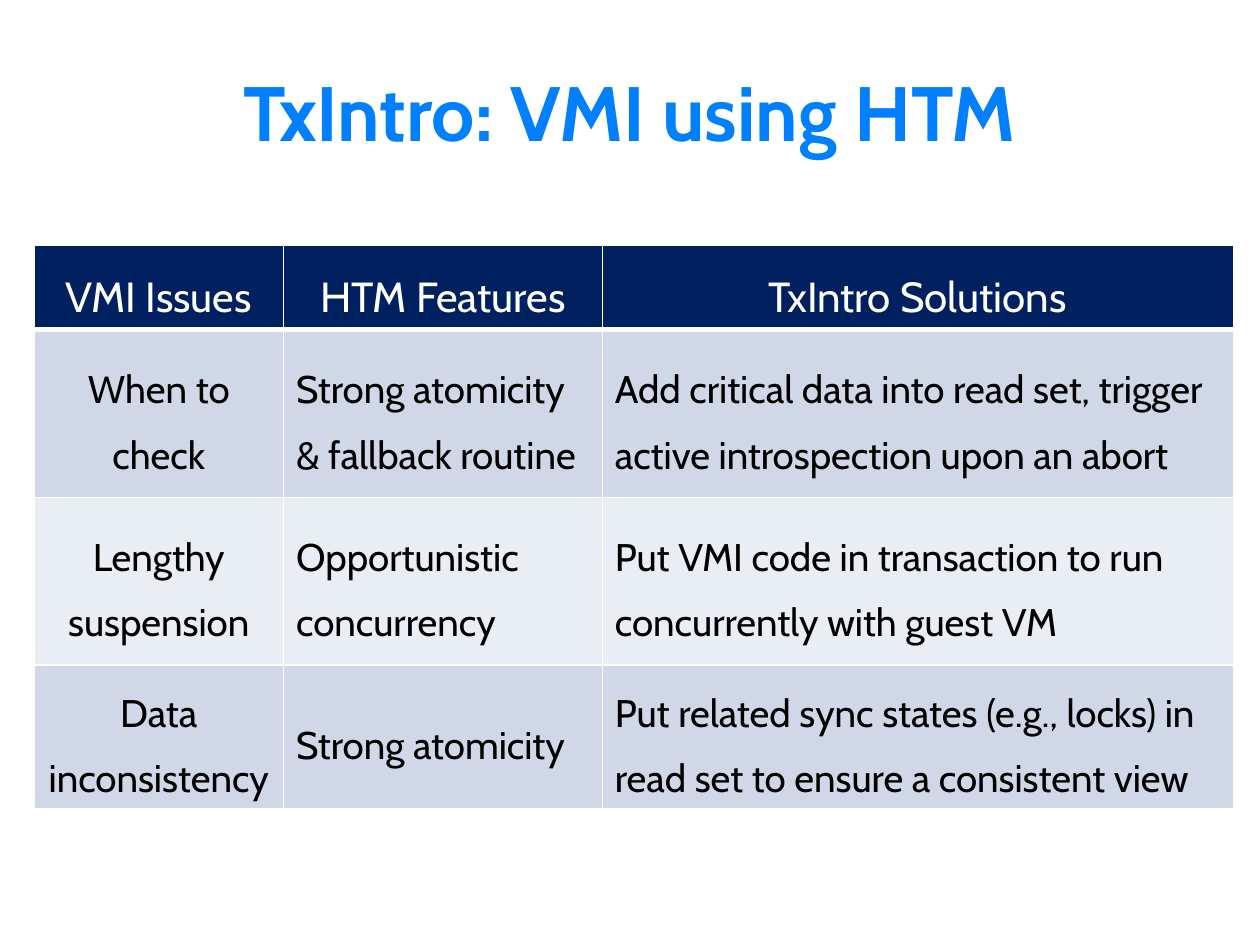
from lxml import etree
from pptx import Presentation
from pptx.dml.color import RGBColor
from pptx.enum.text import MSO_ANCHOR, PP_ALIGN
from pptx.oxml.ns import qn
from pptx.util import Inches, Pt

CENTER, LEFT = PP_ALIGN.CENTER, PP_ALIGN.LEFT
MIDDLE = MSO_ANCHOR.MIDDLE
FONT = "Cabin"
COLORS = {
    "title": "0080FF",
    "header": "002060",
    "band_dark": "D0D8E8",
    "band_light": "E9EDF4",
    "white": "FFFFFF",
    "black": "000000",
}
TITLE_ONLY = 5

COL_WIDTHS = [1.98, 2.53, 5.01]
ROW_HEIGHTS = [0.46, 1.33, 1.33, 0.91]
ROWS = [
    ["VMI Issues", "HTM Features", "TxIntro Solutions"],
    ["When to check", "Strong atomicity & fallback routine",
     "Add critical data into read set, trigger active introspection upon an abort"],
    ["Lengthy suspension", "Opportunistic\nconcurrency",
     "Put VMI code in transaction to run concurrently with guest VM"],
    ["Data inconsistency", "Strong atomicity",
     "Put related sync states (e.g., locks) in read set to ensure a consistent view"],
]


class Deck:
    """Holds the style and the current slide."""

    def __init__(self, prs):
        self.s = prs.slides.add_slide(prs.slide_layouts[TITLE_ONLY])

    def style(self, tf, size, color, align, bold=False, spacing=None):
        for p in tf.paragraphs:
            p.alignment = align
            p.line_spacing = spacing
            for r in p.runs:
                r.font.name = FONT
                r.font.size = Pt(size)
                r.font.bold = bold
                r.font.color.rgb = RGBColor.from_string(COLORS[color])

    def title(self, text, x, y, w, h):
        sp = self.s.shapes.title
        sp.left, sp.top, sp.width, sp.height = map(Inches, (x, y, w, h))
        tf = sp.text_frame
        tf.text = text
        tf.vertical_anchor = MIDDLE
        self.style(tf, 44, "title", CENTER, bold=True)

    def border(self, cell, side, width):
        tc_pr = cell._tc.get_or_add_tcPr()
        ln = etree.SubElement(tc_pr, qn(f"a:ln{side}"), w=str(Pt(width)))
        fill = etree.SubElement(ln, qn("a:solidFill"))
        etree.SubElement(fill, qn("a:srgbClr"), val=COLORS["white"])

    def cell(self, cell, text, fill, size, color, align):
        cell.text = text
        cell.vertical_anchor = MIDDLE
        cell.fill.solid()
        cell.fill.fore_color.rgb = RGBColor.from_string(COLORS[fill])
        self.style(cell.text_frame, size, color, align, spacing=1.4)

    def table(self, rows, x, y, widths, heights):
        table = self.s.shapes.add_table(
            len(rows), len(widths), Inches(x), Inches(y),
            Inches(sum(widths)), Inches(sum(heights))).table
        for col, width in zip(table.columns, widths):
            col.width = Inches(width)
        for row, height in zip(table.rows, heights):
            row.height = Inches(height)
        for i, texts in enumerate(rows):
            for j, text in enumerate(texts):
                cell = table.cell(i, j)
                if i == 0:
                    for side, width in zip("LRTB", (1, 1, 1, 3)):
                        self.border(cell, side, width)
                    self.cell(cell, text, "header", 24, "white", CENTER)
                else:
                    band = "band_dark" if i % 2 else "band_light"
                    align = CENTER if j == 0 else LEFT
                    self.cell(cell, text, band, 22, "black", align)


def main():
    prs = Presentation()
    prs.slide_width, prs.slide_height = Inches(10), Inches(7.5)
    deck = Deck(prs)

    # Title
    deck.title("TxIntro: VMI using HTM", 0.5, 0.25, 9, 1.25)

    # Issues, features and solutions
    deck.table(ROWS, 0.27, 1.95, COL_WIDTHS, ROW_HEIGHTS)

    prs.save("out.pptx")


if __name__ == "__main__":
    main()
